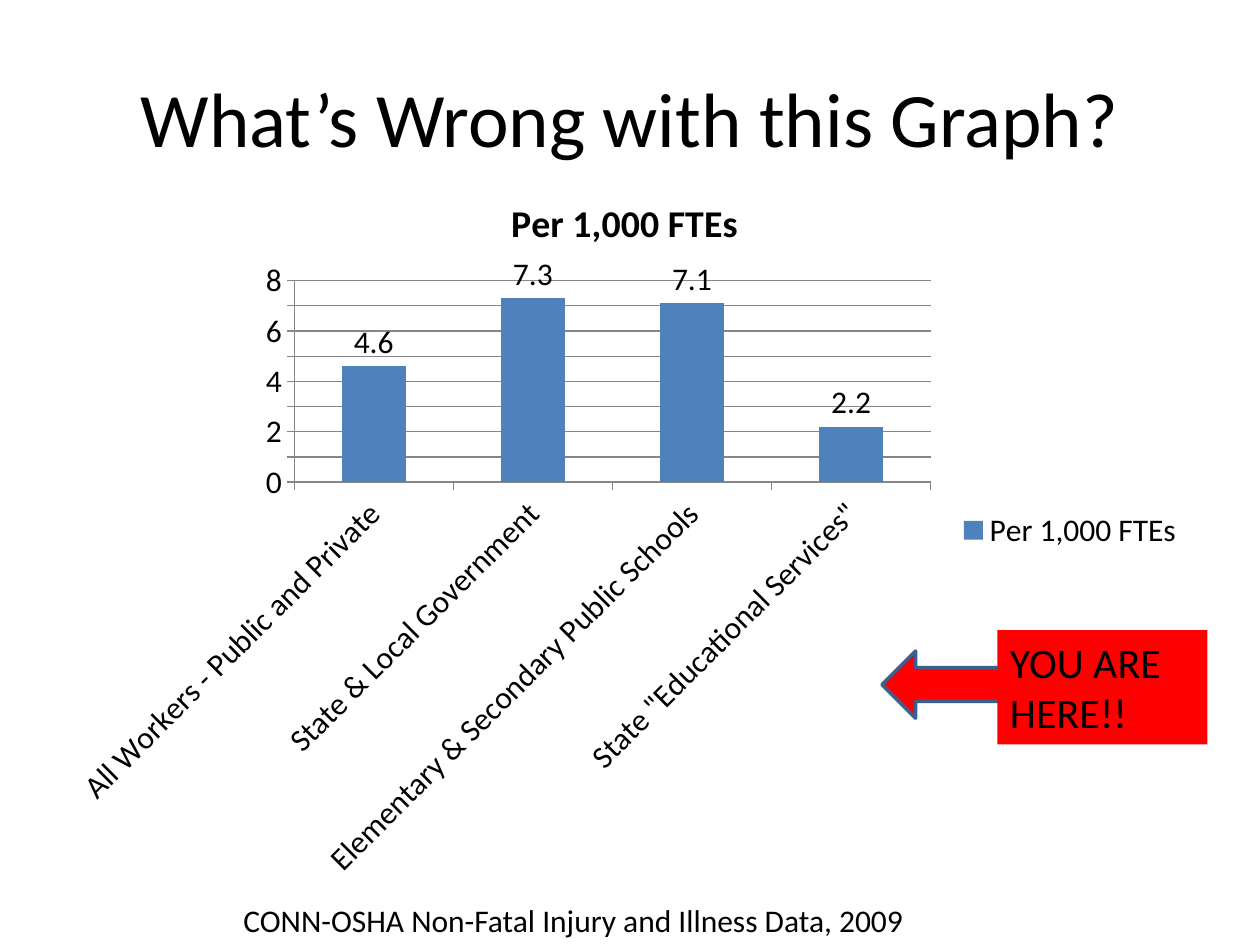
from dataclasses import dataclass

from pptx import Presentation
from pptx.chart.data import CategoryChartData
from pptx.dml.color import RGBColor
from pptx.enum.chart import XL_CHART_TYPE as ChartType
from pptx.enum.chart import XL_LABEL_POSITION as LabelPos
from pptx.enum.chart import XL_LEGEND_POSITION as LegendPos
from pptx.enum.chart import XL_TICK_MARK as Tick
from pptx.enum.shapes import MSO_SHAPE as Shape
from pptx.enum.text import MSO_ANCHOR as Anchor
from pptx.enum.text import PP_ALIGN as Align
from pptx.util import Pt

FONT = "Calibri"
BLACK, RED, BLUE, NAVY, GRAY = "000000", "FF0000", "4F81BD", "3A5F8C", "868686"


@dataclass
class Box:
    left: float
    top: float
    width: float
    height: float

    def emu(self) -> tuple:
        return Pt(self.left), Pt(self.top), Pt(self.width), Pt(self.height)


def rgb(color: str) -> RGBColor:
    return RGBColor.from_string(color)


def set_font(font, size: float, bold: bool = False) -> None:
    font.name, font.size, font.bold = FONT, Pt(size), bold
    font.color.rgb = rgb(BLACK)


def write(tf, text: str, size: float = 18, align=Align.LEFT, anchor=Anchor.TOP) -> None:
    tf.word_wrap = True
    tf.vertical_anchor = anchor
    p = tf.paragraphs[0]
    p.alignment = align
    r = p.add_run()
    r.text = text
    set_font(r.font, size)


def add_red_shape(slide, kind, box: Box, outline: str = ""):
    sp = slide.shapes.add_shape(kind, *box.emu())
    sp.shadow.inherit = False
    sp.fill.solid()
    sp.fill.fore_color.rgb = rgb(RED)
    if outline:
        sp.line.color.rgb = rgb(outline)
        sp.line.width = Pt(2)
    else:
        sp.line.fill.background()
    return sp


def add_rate_chart(slide, box: Box) -> None:
    data = CategoryChartData()
    data.categories = [
        "All Workers - Public and Private",
        "State & Local Government",
        "Elementary & Secondary Public Schools",
        'State "Educational Services"',
    ]
    data.add_series("Per 1,000 FTEs", (4.6, 7.3, 7.1, 2.2))
    chart = slide.shapes.add_chart(ChartType.COLUMN_CLUSTERED, *box.emu(), data).chart
    set_font(chart.font, 18)

    # Title and legend
    chart.has_title = True
    tf = chart.chart_title.text_frame
    tf.text = "Per 1,000 FTEs"
    set_font(tf.paragraphs[0].runs[0].font, 21.6, bold=True)
    chart.has_legend = True
    chart.legend.position = LegendPos.RIGHT
    chart.legend.include_in_layout = False
    set_font(chart.legend.font, 18)

    # Columns and value labels
    plot = chart.plots[0]
    plot.gap_width = 150
    plot.vary_by_categories = False
    series = plot.series[0]
    series.format.fill.solid()
    series.format.fill.fore_color.rgb = rgb(BLUE)
    labels = series.data_labels
    labels.show_value = True
    labels.position = LabelPos.OUTSIDE_END
    set_font(labels.font, 18)

    # Axes
    cat_axis, val_axis = chart.category_axis, chart.value_axis
    val_axis.minimum_scale, val_axis.maximum_scale, val_axis.major_unit = 0, 8, 1
    val_axis.has_major_gridlines = True
    val_axis.major_gridlines.format.line.color.rgb = rgb(GRAY)
    for axis in (cat_axis, val_axis):
        axis.major_tick_mark, axis.minor_tick_mark = Tick.OUTSIDE, Tick.NONE
        axis.format.line.color.rgb = rgb(GRAY)
        set_font(axis.tick_labels.font, 18)
    # Slant the category names by 45 degrees
    body = cat_axis._element.txPr.bodyPr
    body.set("rot", "-2700000")
    body.set("vert", "horz")


def main() -> None:
    prs = Presentation()
    prs.slide_width, prs.slide_height = Pt(720), Pt(540)
    slide = prs.slides.add_slide(prs.slide_layouts[5])

    # Title
    title = slide.shapes.title
    title.left, title.top, title.width, title.height = Box(36, 21.6, 648, 90).emu()
    write(title.text_frame, "What’s Wrong with this Graph?", size=44,
          align=Align.CENTER, anchor=Anchor.MIDDLE)

    add_rate_chart(slide, Box(30, 96, 654, 414))

    # Callout pointing at the last column
    add_red_shape(slide, Shape.LEFT_ARROW, Box(504, 372, 77, 38.4), outline=NAVY)
    callout = add_red_shape(slide, Shape.RECTANGLE, Box(570, 360, 120, 65.4))
    write(callout.text_frame, "YOU ARE HERE!!", size=24)

    # Data source
    source = slide.shapes.add_textbox(*Box(132, 511.2, 444, 29).emu())
    write(source.text_frame, "CONN-OSHA Non-Fatal Injury and Illness Data, 2009")

    prs.save("out.pptx")


if __name__ == "__main__":
    main()
